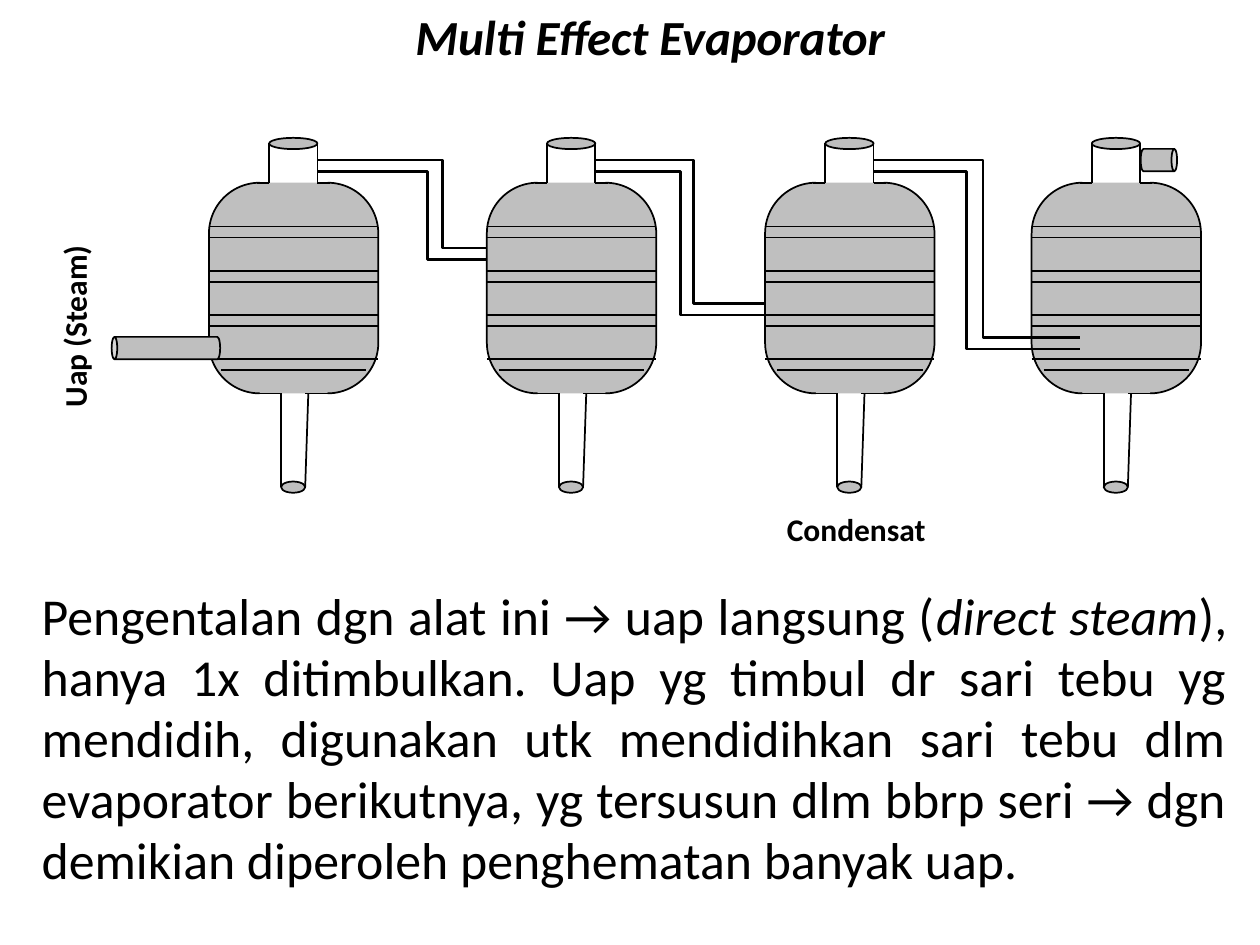
from dataclasses import dataclass

from lxml.etree import SubElement
from pptx import Presentation
from pptx.dml.color import RGBColor
from pptx.enum.shapes import MSO_CONNECTOR as Link, MSO_SHAPE as Preset
from pptx.enum.text import MSO_ANCHOR as Anchor, MSO_AUTO_SIZE as Fit, PP_ALIGN as Align
from pptx.oxml.ns import qn
from pptx.util import Pt

BLACK, GREY = "000000", "BFBFBF"
FONT = "Calibri"

VESSEL_LEFTS = (119.4, 278.2, 437.2, 589.5)
VESSEL_WIDTH, VESSEL_TOP, VESSEL_HEIGHT = 96.8, 104.4, 120.4
VESSEL_BOTTOM = VESSEL_TOP + VESSEL_HEIGHT
NECK_LEFT, NECK_RIGHT, NECK_TOP = 34.4, 62, 82
FOOT_LEFT, FOOT_RIGHT, FOOT_BOTTOM = 41.2, 55, 278.4
SHOULDER_LEFT, SHOULDER_RIGHT = 27.4, 69
BAND_TOP, BAND_STEP, BAND_GAP = 129.4, 25.3, 6.3
LID_HEIGHT = 6.4


@dataclass(frozen=True)
class Pipe:
    start_x: float
    start_y: float
    end_x: float
    end_y: float
    bend: float


PIPES = (
    Pipe(181.4, 91.4, 278.2, 141.8, 0.74),
    Pipe(181.4, 97.9, 278.2, 148.3, 0.65),
    Pipe(340.2, 97.9, 437.2, 180, 0.5),
    Pipe(340.2, 91.4, 437.2, 173.5, 0.58),
    Pipe(499.4, 91.4, 617, 193, 0.53),
    Pipe(499.4, 97.9, 617, 199.4, 0.45),
)


@dataclass(frozen=True)
class Nozzle:
    left: float
    top: float
    width: float
    height: float
    rotation: int


NOZZLES = (
    Nozzle(88.4, 167.9, 12.8, 62, 270),
    Nozzle(655.8, 81.1, 12.8, 20.8, 90),
)


@dataclass(frozen=True)
class Label:
    text: str
    left: float
    top: float
    width: float
    height: float
    rotation: int = 0


LABELS = (
    Label("Uap (Steam)", -23.8, 168.5, 139.7, 36, 270),
    Label("Condensat", 430.6, 288, 117.4, 33),
)

BODY_PARTS = (
    ("Pengentalan dgn alat ini → uap langsung (", False),
    ("direct steam", True),
    ("), hanya 1x ditimbulkan. Uap yg timbul dr sari tebu yg mendidih, "
     "digunakan utk mendidihkan sari tebu dlm evaporator berikutnya, yg "
     "tersusun dlm bbrp seri → dgn demikian diperoleh penghematan banyak uap.", False),
)


def color(value: str) -> RGBColor:
    return RGBColor.from_string(value)


def place(box, left: float, top: float, width: float, height: float) -> None:
    box.left, box.top, box.width, box.height = map(Pt, (left, top, width, height))


def style(font, size: float, bold: bool = False, italic: bool = False) -> None:
    font.name, font.size, font.bold, font.italic = FONT, Pt(size), bold, italic
    font.color.rgb = color(BLACK)


def add_solid(shapes, preset, left: float, top: float, width: float, height: float):
    """Add a grey preset shape with a black outline."""
    solid = shapes.add_shape(preset, Pt(left), Pt(top), Pt(width), Pt(height))
    solid.shadow.inherit = False
    solid.fill.solid()
    solid.fill.fore_color.rgb = color(GREY)
    solid.line.color.rgb = color(BLACK)
    solid.line.width = Pt(1)
    return solid


def add_line(shapes, x1: float, y1: float, x2: float, y2: float,
             kind=Link.STRAIGHT, weight: float = 1):
    line = shapes.add_connector(kind, Pt(x1), Pt(y1), Pt(x2), Pt(y2))
    line.line.color.rgb = color(BLACK)
    line.line.width = Pt(weight)
    SubElement(line._element.spPr, qn("a:effectLst"))
    return line


def add_vessel(shapes, left: float) -> None:
    tank = add_solid(shapes, Preset.DOUBLE_BRACKET, left, VESSEL_TOP,
                     VESSEL_WIDTH, VESSEL_HEIGHT)
    tank.adjustments[0] = 0.3

    def stroke(x1: float, y1: float, x2: float, y2: float) -> None:
        add_line(shapes, left + x1, y1, left + x2, y2)

    stroke(NECK_RIGHT, VESSEL_TOP, NECK_RIGHT, NECK_TOP)
    stroke(NECK_LEFT, VESSEL_TOP, NECK_LEFT, NECK_TOP)
    add_solid(shapes, Preset.OVAL, left + NECK_LEFT, NECK_TOP - LID_HEIGHT / 2,
              NECK_RIGHT - NECK_LEFT, LID_HEIGHT)
    stroke(FOOT_LEFT, FOOT_BOTTOM, FOOT_LEFT, VESSEL_BOTTOM)
    stroke(FOOT_RIGHT, FOOT_BOTTOM, FOOT_RIGHT + 1.8, VESSEL_BOTTOM)
    add_solid(shapes, Preset.OVAL, left + FOOT_LEFT, FOOT_BOTTOM - LID_HEIGHT / 2,
              FOOT_RIGHT - FOOT_LEFT, LID_HEIGHT)

    for band in range(4):
        y = BAND_TOP + band * BAND_STEP
        inset = 6.8 if band == 3 else 0
        stroke(0, y, VESSEL_WIDTH, y)
        stroke(inset, y + BAND_GAP, VESSEL_WIDTH - inset, y + BAND_GAP)

    for y, inner_left, inner_right in (
        (VESSEL_TOP, NECK_LEFT, NECK_RIGHT),
        (VESSEL_BOTTOM, FOOT_LEFT, FOOT_RIGHT),
    ):
        stroke(inner_left, y, SHOULDER_LEFT, y)
        stroke(SHOULDER_RIGHT, y, inner_right, y)


def add_pipe(shapes, pipe: Pipe) -> None:
    line = add_line(shapes, pipe.start_x, pipe.start_y, pipe.end_x, pipe.end_y,
                    Link.ELBOW, 1.5)
    guides = line._element.spPr.prstGeom.get_or_add_avLst()
    SubElement(guides, qn("a:gd"), name="adj1", fmla=f"val {round(pipe.bend * 100000)}")


def add_label(shapes, label: Label) -> None:
    box = shapes.add_textbox(Pt(label.left), Pt(label.top), Pt(label.width), Pt(label.height))
    box.rotation = label.rotation
    frame = box.text_frame
    frame.word_wrap = True
    frame.text = label.text
    para = frame.paragraphs[0]
    para.alignment = Align.CENTER
    style(para.runs[0].font, 18, bold=True)


def fill_title(title) -> None:
    place(title, 219.6, 0, 303.8, 41.2)
    frame = title.text_frame
    frame.text = "Multi Effect Evaporator"
    frame.auto_size, frame.vertical_anchor = Fit.NONE, Anchor.TOP
    para = frame.paragraphs[0]
    para.alignment = Align.CENTER
    style(para.runs[0].font, 28, bold=True, italic=True)


def fill_body(body) -> None:
    place(body, 16.6, 331.9, 691.9, 202.3)
    frame = body.text_frame
    frame.auto_size, frame.vertical_anchor = Fit.NONE, Anchor.TOP
    para = frame.paragraphs[0]
    para.alignment = Align.JUSTIFY
    para.space_before, para.line_spacing = Pt(0), 0.98
    properties = para._p.get_or_add_pPr()
    properties.set("marL", "0")
    properties.set("indent", "0")
    SubElement(properties, qn("a:buNone"))
    for text, italic in BODY_PARTS:
        span = para.add_run()
        span.text = text
        style(span.font, 29.6, italic=italic)


def main() -> None:
    deck = Presentation()
    deck.slide_width, deck.slide_height = Pt(720), Pt(540)
    page = deck.slides.add_slide(deck.slide_layouts[1])
    fill_title(page.shapes.title)
    fill_body(page.placeholders[1])

    diagram = page.shapes.add_group_shape().shapes
    for left in VESSEL_LEFTS:
        add_vessel(diagram, left)
    for pipe in PIPES:
        add_pipe(diagram, pipe)
    for nozzle in NOZZLES:
        can = add_solid(diagram, Preset.CAN, nozzle.left, nozzle.top,
                        nozzle.width, nozzle.height)
        can.rotation = nozzle.rotation
    for label in LABELS:
        add_label(diagram, label)
    deck.save("out.pptx")


if __name__ == "__main__":
    main()
